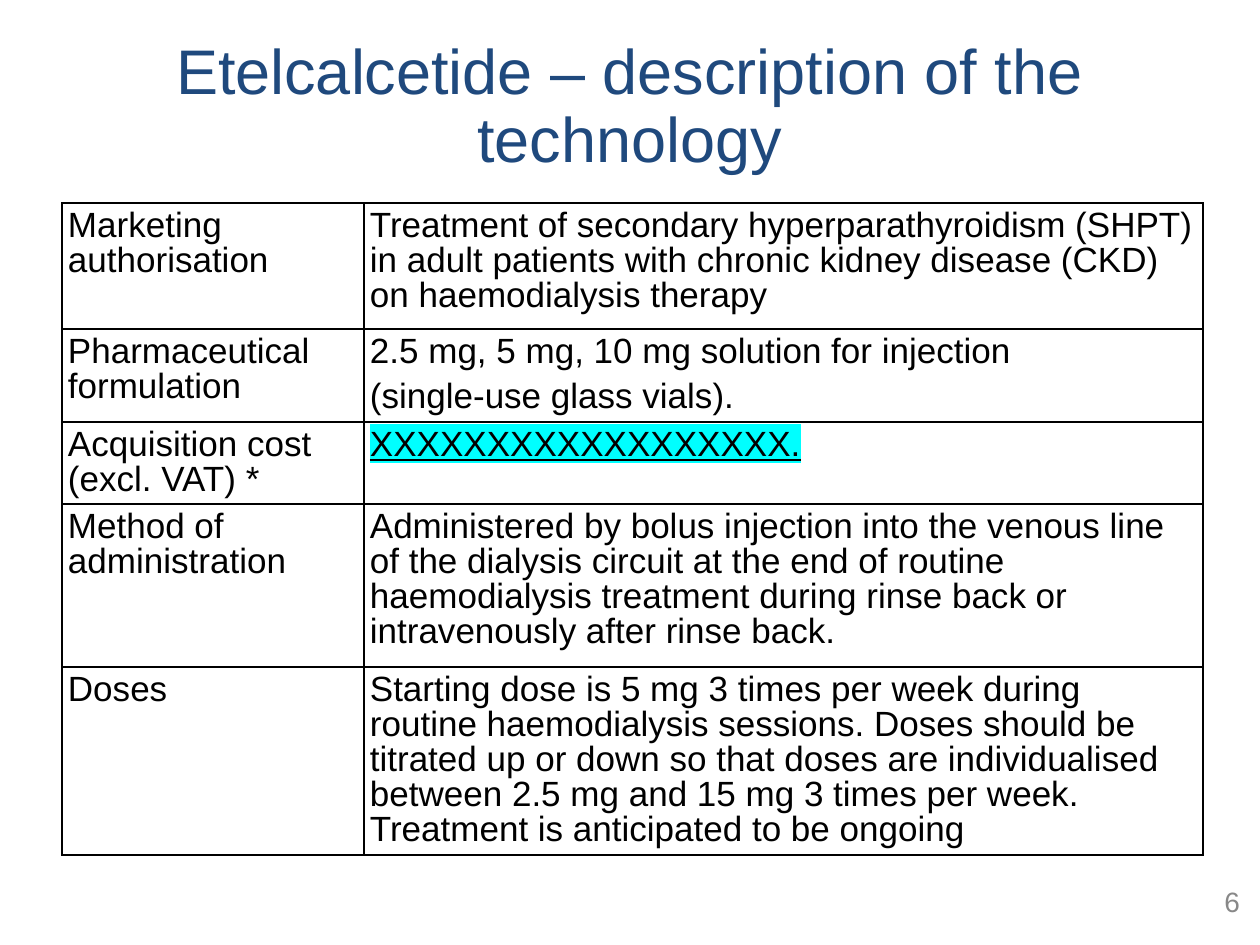
from lxml.etree import SubElement
from pptx import Presentation
from pptx.dml.color import RGBColor
from pptx.enum.text import MSO_ANCHOR, PP_ALIGN
from pptx.oxml import parse_xml
from pptx.oxml.ns import nsdecls, qn
from pptx.util import Emu, Pt

PX = 914400 / 126
THEME = {
    "font": "Arial",
    "title": (36, "1F497D"),
    "body": (20, "000000"),
    "number": (16, "888888"),
    "paper": "FFFFFF",
    "border": "000000",
    "highlight": "00FFFF",
}


def px(*lengths):
    return [Emu(round(length * PX)) for length in lengths]


def write(frame, lines, style, **paragraph_format):
    """Fill a text frame with one paragraph per line and return its runs."""
    size, color = THEME[style]
    runs = []
    for i, line in enumerate(lines):
        paragraph = frame.add_paragraph() if i else frame.paragraphs[0]
        for name, value in paragraph_format.items():
            setattr(paragraph, name, value)
        run = paragraph.add_run()
        run.text = line
        for name, value in {"name": THEME["font"], "size": Pt(size)}.items():
            setattr(run.font, name, value)
        run.font.color.rgb = RGBColor.from_string(color)
        runs.append(run)
    return runs


prs = Presentation()
prs.slide_width, prs.slide_height = px(1260, 945)
slide = prs.slides.add_slide(prs.slide_layouts[6])
margin, = px(6)
margins = {f"margin_{side}": margin for side in ("left", "right", "top", "bottom")}

# Technology table
technology = [
    ("Marketing authorisation",
     ["Treatment of secondary hyperparathyroidism (SHPT) in adult patients "
      "with chronic kidney disease (CKD) on haemodialysis therapy"]),
    ("Pharmaceutical formulation",
     ["2.5 mg, 5 mg, 10 mg solution for injection",
      "(single-use glass vials)."]),
    ("Acquisition cost (excl. VAT) *",
     ["XXXXXXXXXXXXXXXXXX."]),
    ("Method of administration",
     ["Administered by bolus injection into the venous line of the dialysis "
      "circuit at the end of routine haemodialysis treatment during rinse back "
      "or intravenously after rinse back."]),
    ("Doses",
     ["Starting dose is 5 mg 3 times per week during routine haemodialysis "
      "sessions. Doses should be titrated up or down so that doses are "
      "individualised between 2.5 mg and 15 mg 3 times per week. "
      "Treatment is anticipated to be ongoing"]),
]
column_widths = px(302, 839)
row_heights = px(126, 93, 76, 163, 188)
table = slide.shapes.add_table(
    len(technology), 2, *px(62, 203), sum(column_widths), sum(row_heights)).table
for name in ("first_row", "horz_banding"):
    setattr(table, name, False)
for column, width in zip(table.columns, column_widths):
    column.width = width

for row, height, (topic, details) in zip(table.rows, row_heights, technology):
    row.height = height
    for cell, lines in zip(row.cells, ([topic], details)):
        for name, value in margins.items():
            setattr(cell, name, value)
        cell.fill.solid()
        cell.fill.fore_color.rgb = RGBColor.from_string(THEME["paper"])
        for i, side in enumerate("LRTB"):
            cell._tc.get_or_add_tcPr().insert(i, parse_xml(
                f'<a:ln{side} {nsdecls("a")} w="{Pt(1)}"><a:solidFill>'
                f'<a:srgbClr val="{THEME["border"]}"/></a:solidFill></a:ln{side}>'))
        runs = write(cell.text_frame, lines, "body",
                     line_spacing=0.9, space_after=Pt(6))

        # Concealed cost
        if lines == ["XXXXXXXXXXXXXXXXXX."]:
            font = runs[0].font
            font.underline = True
            properties = runs[0]._r.get_or_add_rPr()
            highlight = SubElement(properties, qn("a:highlight"))
            SubElement(highlight, qn("a:srgbClr"), val=THEME["highlight"])
            properties.find(qn("a:solidFill")).addnext(highlight)

# Title and slide number
captions = [
    ("Etelcalcetide – description of the technology", "title", (60, 28, 1139, 161),
     {"alignment": PP_ALIGN.CENTER, "line_spacing": 0.9}),
    ("6", "number", (1173, 878, 73, 47), {"alignment": PP_ALIGN.RIGHT}),
]
for caption, style, box, paragraph_format in captions:
    frame = slide.shapes.add_textbox(*px(*box)).text_frame
    frame_format = {**margins, "word_wrap": True, "vertical_anchor": MSO_ANCHOR.MIDDLE}
    for name, value in frame_format.items():
        setattr(frame, name, value)
    write(frame, [caption], style, **paragraph_format)

prs.save("out.pptx")
